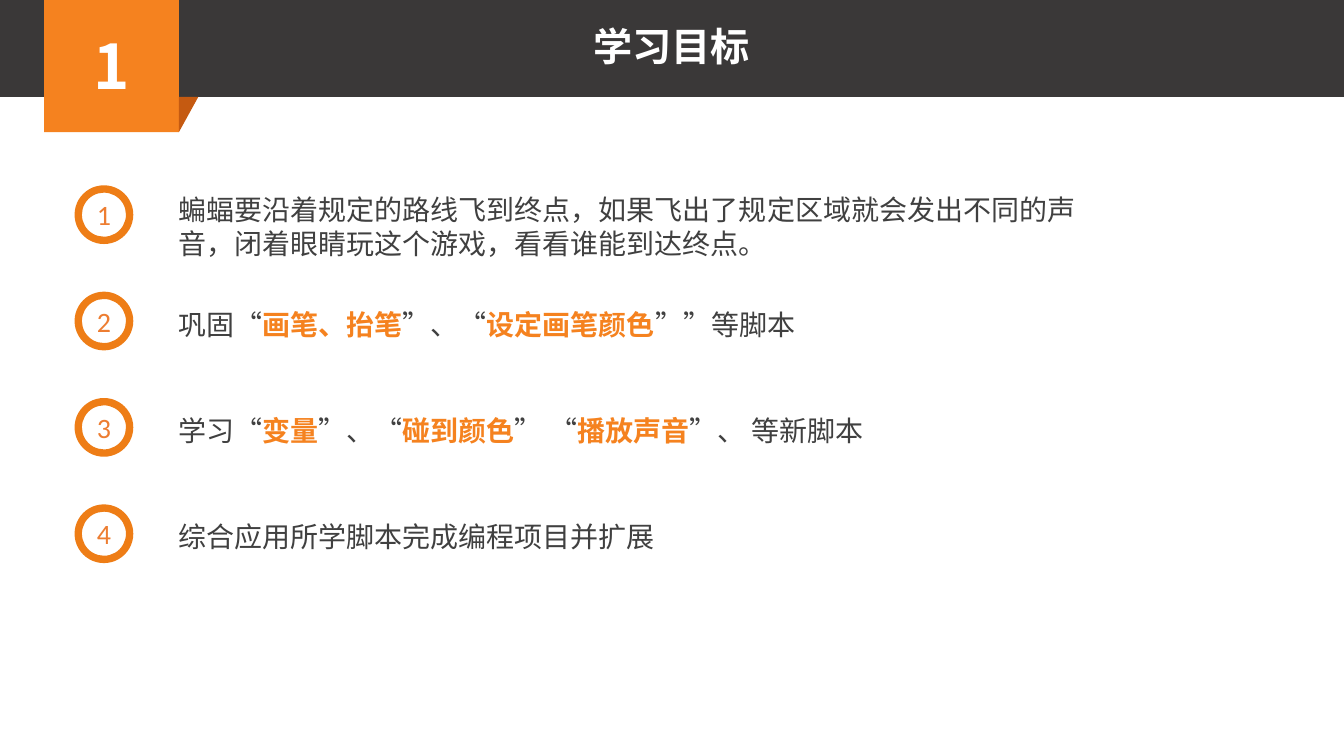
import pptx
import pptx.util
import pptx.dml.color
import pptx.enum.shapes
import pptx.enum.text
import lxml.etree
from pptx.oxml.ns import qn
from pptx.util import Cm, Pt

CJK = "Noto Sans CJK SC"
ORANGE, GREY, WHITE = "F5821F", "404040", "FFFFFF"
SHAPES = pptx.enum.shapes.MSO_SHAPE
ALIGN = pptx.enum.text.PP_ALIGN
ANCHOR = pptx.enum.text.MSO_ANCHOR

SECTION = "1"
TITLE = "学习目标"
GOALS = [
    ["蝙蝠要沿着规定的路线飞到终点，如果飞出了规定区域就会发出不同的声音，闭着眼睛玩这个游戏，看看谁能到达终点。"],
    ["巩固“", "画笔、抬笔", "”、“", "设定画笔颜色", "””等脚本"],
    ["学习“", "变量", "”、“", "碰到颜色", "” “", "播放声音", "”、 等新脚本"],
    ["综合应用所学脚本完成编程项目并扩展"],
]

RING_LEFT, RING_TOP, RING_SIZE, GOAL_STEP = 1.88, 4.67, 1.48, 2.68
GOAL_LEFT = 4.24
LONG_GOAL = (23.57, 1.96, 0.04)
SHORT_GOAL = (18.36, 1.12, 0.25)


def rgb(value):
    return pptx.dml.color.RGBColor.from_string(value)


def style(paragraph, face, size, color, bold=False, align=ALIGN.LEFT):
    paragraph.alignment = align
    font = paragraph.font
    font.size, font.bold, font.name = Pt(size), bold, face
    font.color.rgb = rgb(color)
    east_asian = lxml.etree.SubElement(font._element, qn("a:ea"))
    east_asian.set("typeface", face)


def add_block(slide, kind, left, top, width, height, color):
    block = slide.shapes.add_shape(kind, Cm(left), Cm(top), Cm(width), Cm(height))
    block.shadow.inherit = False
    block.fill.solid()
    block.fill.fore_color.rgb = rgb(color)
    block.line.fill.background()
    return block


def fill_label(label, text, face, size, color, bold):
    frame = label.text_frame
    frame.margin_left = frame.margin_right = 0
    frame.margin_top = frame.margin_bottom = 0
    frame.vertical_anchor = ANCHOR.MIDDLE
    frame.word_wrap = True
    frame.auto_size = pptx.enum.text.MSO_AUTO_SIZE.NONE
    frame.text = text
    style(frame.paragraphs[0], face, size, color, bold, ALIGN.CENTER)


def add_header(slide):
    add_block(slide, SHAPES.RECTANGLE, 0, -0.08, 33.87, 2.52, "3A3838")
    badge = add_block(slide, SHAPES.RECTANGLE, 1.11, -0.08, 3.4, 3.41, ORANGE)
    fill_label(badge, SECTION, CJK, 44, WHITE, True)
    fold = add_block(slide, SHAPES.RIGHT_TRIANGLE, 4.51, 2.44, 0.49, 0.89, "C55A11")
    fold.element.spPr.xfrm.set("flipV", "1")
    title = slide.shapes.title
    title.left, title.top, title.width, title.height = Cm(11.38), Cm(0.42), Cm(11.1), Cm(1.45)
    fill_label(title, TITLE, CJK, 28, WHITE, True)
    title.element.getparent().append(title.element)


def add_goal(slide, index, pieces):
    top = RING_TOP + index * GOAL_STEP
    ring = add_block(slide, SHAPES.DONUT, RING_LEFT, top, RING_SIZE, RING_SIZE, "EE7D16")
    ring.adjustments[0] = 0.125
    fill_label(ring, str(index + 1), "Calibri", 20, "ED7D31", False)

    width, height, drop = LONG_GOAL if index == 0 else SHORT_GOAL
    goal = slide.shapes.add_textbox(Cm(GOAL_LEFT), Cm(top + drop), Cm(width), Cm(height))
    goal.text_frame.word_wrap = True
    paragraph = goal.text_frame.paragraphs[0]
    paragraph.line_spacing = Pt(24.4)
    for position, piece in enumerate(pieces):
        run = paragraph.add_run()
        run.text = piece
        run.font.language_id = pptx.enum.lang.MSO_LANGUAGE_ID.SIMPLIFIED_CHINESE
        if position % 2:
            run.font.bold = True
            run.font.color.rgb = rgb(ORANGE)
    style(paragraph, CJK, 20, GREY)


def main():
    deck = pptx.Presentation()
    deck.slide_width, deck.slide_height = Cm(33.87), Cm(19.05)
    slide = deck.slides.add_slide(deck.slide_layouts[5])
    add_header(slide)
    for index, pieces in enumerate(GOALS):
        add_goal(slide, index, pieces)
    deck.save("out.pptx")


if __name__ == "__main__":
    import pptx.enum.lang
    main()
